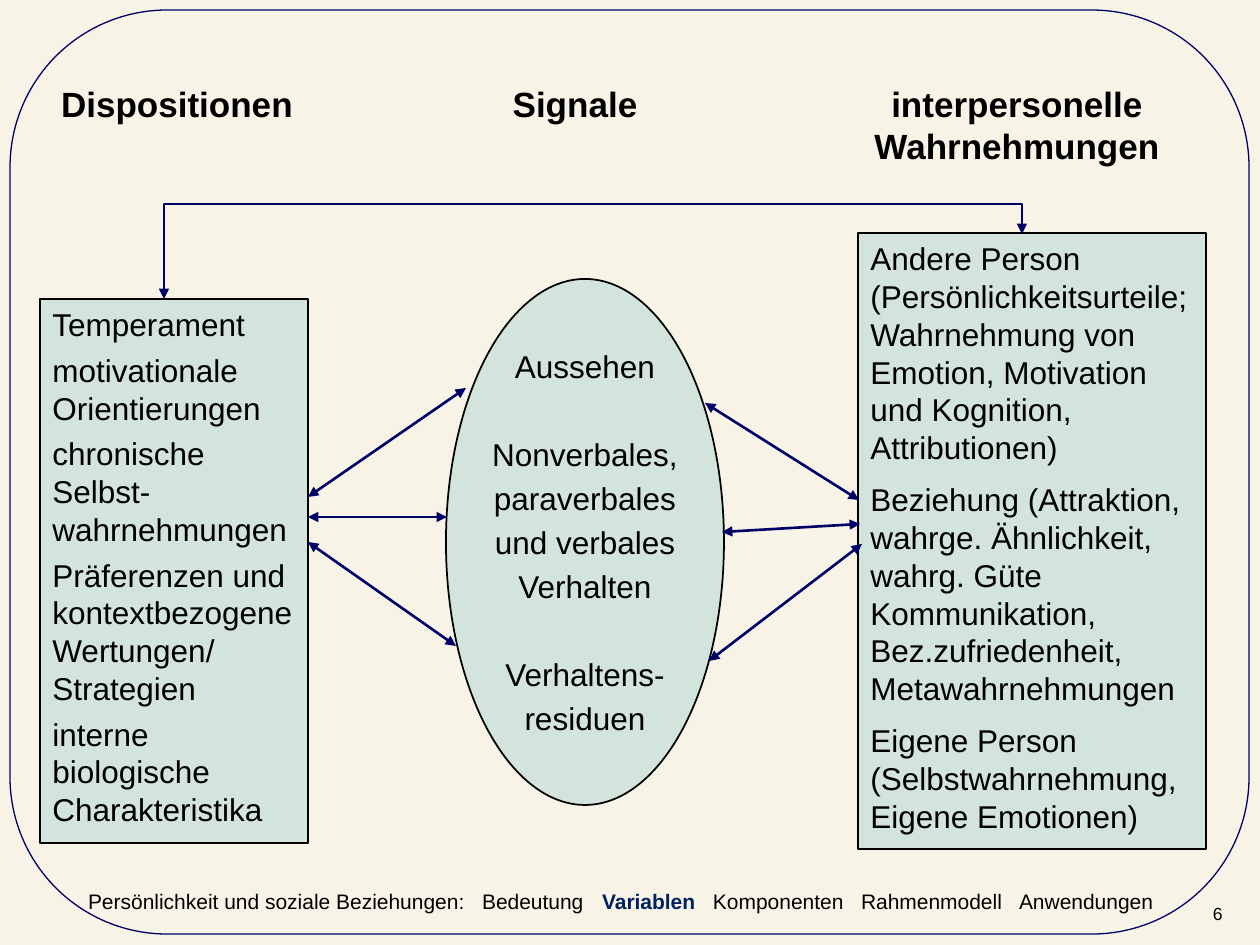
import pptx
import pptx.util
import pptx.dml.color
import pptx.enum.shapes
import pptx.enum.text
import pptx.oxml.ns
from lxml import etree

SCALE = pptx.util.Inches(1) / 126
qn = pptx.oxml.ns.qn
Pt = pptx.util.Pt
KIND = pptx.enum.shapes.MSO_SHAPE
LINK = pptx.enum.shapes.MSO_CONNECTOR
ALIGN = pptx.enum.text.PP_ALIGN
ANCHOR = pptx.enum.text.MSO_ANCHOR


def emu(*vals):
    return [round(v * SCALE) for v in vals]


def rgb(code):
    return pptx.dml.color.RGBColor.from_string(code)


class Board:
    font, ink, navy, mint, paper = "Arial", "000000", "000066", "ACD4D3", "F7F4E7"

    def __init__(self, deck):
        self.slide = deck.slides.add_slide(deck.slide_layouts[6])
        self.home = self.slide.shapes
        back = self.slide.background.fill
        back.solid()
        back.fore_color.rgb = rgb(self.paper)

    def group(self):
        self.home = self.slide.shapes.add_group_shape().shapes

    def ungroup(self):
        self.home = self.slide.shapes

    def text(self, shape, paras, size, align=ALIGN.LEFT, anchor=ANCHOR.TOP,
             before=0, after=0, wrap=True, inset=None):
        """Each paragraph is a list of (words, bold, colour) runs or a string."""
        frame = shape.text_frame
        frame.word_wrap = wrap
        frame.vertical_anchor = anchor
        if inset is not None:
            frame.margin_left = frame.margin_right = emu(inset)[0]
            frame.margin_top = frame.margin_bottom = emu(inset)[0]
        for num, runs in enumerate(paras):
            para = frame.paragraphs[0] if num == 0 else frame.add_paragraph()
            para.alignment = align
            para.line_spacing = Pt(size * 1.2)
            para.space_before, para.space_after = Pt(before), Pt(after)
            if isinstance(runs, str):
                runs = [(runs, False, self.ink)]
            for words, bold, code in runs:
                run = para.add_run()
                run.text = words
                run.font.name, run.font.size = self.font, Pt(size)
                run.font.bold = bold
                run.font.color.rgb = rgb(code)
        return frame

    def label(self, box, runs, size, **style):
        shape = self.home.add_textbox(*emu(*box))
        return self.text(shape, [runs], size, **style)

    def shape(self, kind, box, line, width, fill=None, alpha=48):
        item = self.home.add_shape(kind, *emu(*box))
        item.shadow.inherit = False
        item.line.color.rgb = rgb(line)
        item.line.width = Pt(width)
        if fill is None:
            item.fill.background()
        else:
            item.fill.solid()
            item.fill.fore_color.rgb = rgb(fill)
            tint = item._element.spPr.find(qn("a:solidFill"))[0]
            etree.SubElement(tint, qn("a:alpha")).set("val", str(alpha * 1000))
        return item

    def panel(self, kind, box, paras, **style):
        item = self.shape(kind, box, self.ink, 1, self.mint)
        return self.text(item, paras, 18, **style)

    def arrow(self, start, end, kind=LINK.STRAIGHT):
        item = self.home.add_connector(kind, *emu(*start, *end))
        item.line.color.rgb = rgb(self.navy)
        item.line.width = Pt(1.5)
        props = item._element.spPr
        for tag in ("a:headEnd", "a:tailEnd"):
            etree.SubElement(props.find(qn("a:ln")), qn(tag)).set("type", "triangle")
        etree.SubElement(props, qn("a:effectLst"))
        return item

    def bridge(self, start, end, top):
        """Arrow that rises from start, runs level at top and drops to end."""
        (x1, y1), (x2, y2) = start, end
        wide, high = y1 - y2, x2 - x1
        midx, midy = (x1 + x2) / 2, (y1 + y2) / 2
        item = self.arrow((midx - wide / 2, midy - high / 2),
                          (midx + wide / 2, midy + high / 2), LINK.ELBOW)
        props = item._element.spPr
        props.find(qn("a:xfrm")).set("rot", str(270 * 60000))
        guide = etree.SubElement(props.find(qn("a:prstGeom")).find(qn("a:avLst")), qn("a:gd"))
        guide.set("name", "adj1")
        guide.set("fmla", f"val {round((y1 - top) / wide * 100000)}")


def main():
    deck = pptx.Presentation()
    deck.slide_width, deck.slide_height = emu(1260, 945)
    board = Board(deck)

    # Frame and page number
    frame = board.shape(KIND.ROUNDED_RECTANGLE, (10, 10, 1239, 924), board.navy, 0.75)
    frame.adjustments[0] = 0.17
    board.label((1212, 901, 48, 24), "6", 10, anchor=ANCHOR.BOTTOM, inset=1)

    # Column headings
    board.group()
    for left, width, high, title in ((48, 258, 54, "Dispositionen"),
                                     (441, 268, 54, "Signale"),
                                     (848, 338, 97, "interpersonelle Wahrnehmungen")):
        board.label((left, 76, width, high), [(title, True, board.ink)], 20,
                    align=ALIGN.CENTER)
    board.ungroup()

    # Dispositions, signals and perceptions
    board.panel(KIND.RECTANGLE, (40, 299, 268, 544), [
        "Temperament",
        "motivationale Orientierungen",
        "chronische Selbst-wahrnehmungen",
        "Präferenzen und kontextbezogene Wertungen/ Strategien",
        "interne biologische Charakteristika",
    ], after=4.5)
    signals = board.panel(KIND.OVAL, (446, 279, 278, 526), [
        "Aussehen", "Nonverbales,", "paraverbales", "und verbales", "Verhalten",
        "Verhaltens-", "residuen",
    ], align=ALIGN.CENTER, anchor=ANCHOR.MIDDLE, before=3.6, wrap=False)
    for first in (1, 5):
        signals.paragraphs[first].space_before = Pt(28.8)
    board.panel(KIND.RECTANGLE, (858, 233, 348, 616), [
        "Andere Person (Persönlichkeitsurteile; Wahrnehmung von Emotion, "
        "Motivation und Kognition, Attributionen)",
        "Beziehung (Attraktion, wahrge. Ähnlichkeit, wahrg. Güte "
        "Kommunikation, Bez.zufriedenheit, Metawahrnehmungen",
        "Eigene Person (Selbstwahrnehmung, Eigene Emotionen)",
    ], before=3.6, after=4.5)

    # Two-way arrows on each side of the signals
    for side in ((((308, 497), (466, 388)), ((308, 517), (447, 517)), ((308, 542), (456, 646))),
                 (((862, 544), (709, 661)), ((860, 524), (722, 532)), ((859, 500), (705, 403)))):
        board.group()
        for start, end in side:
            board.arrow(start, end)
    board.ungroup()
    board.bridge((164, 299), (1022, 234), 204)

    # Chapter line
    trail = board.label((87, 888, 1102, 28), [
        ("Persönlichkeit und soziale Beziehungen:\tBedeutung\t", False, board.ink),
        ("Variablen", True, "002060"),
        ("\tKomponenten\tRahmenmodell\tAnwendungen", False, board.ink),
    ], 12, inset=1)
    tabs = etree.SubElement(trail.paragraphs[0]._p.get_or_add_pPr(), qn("a:tabLst"))
    for stop in (394, 514, 625, 773, 931):
        tab = etree.SubElement(tabs, qn("a:tab"))
        tab.set("pos", str(emu(stop)[0]))
        tab.set("algn", "l")

    deck.save("out.pptx")


if __name__ == "__main__":
    main()
